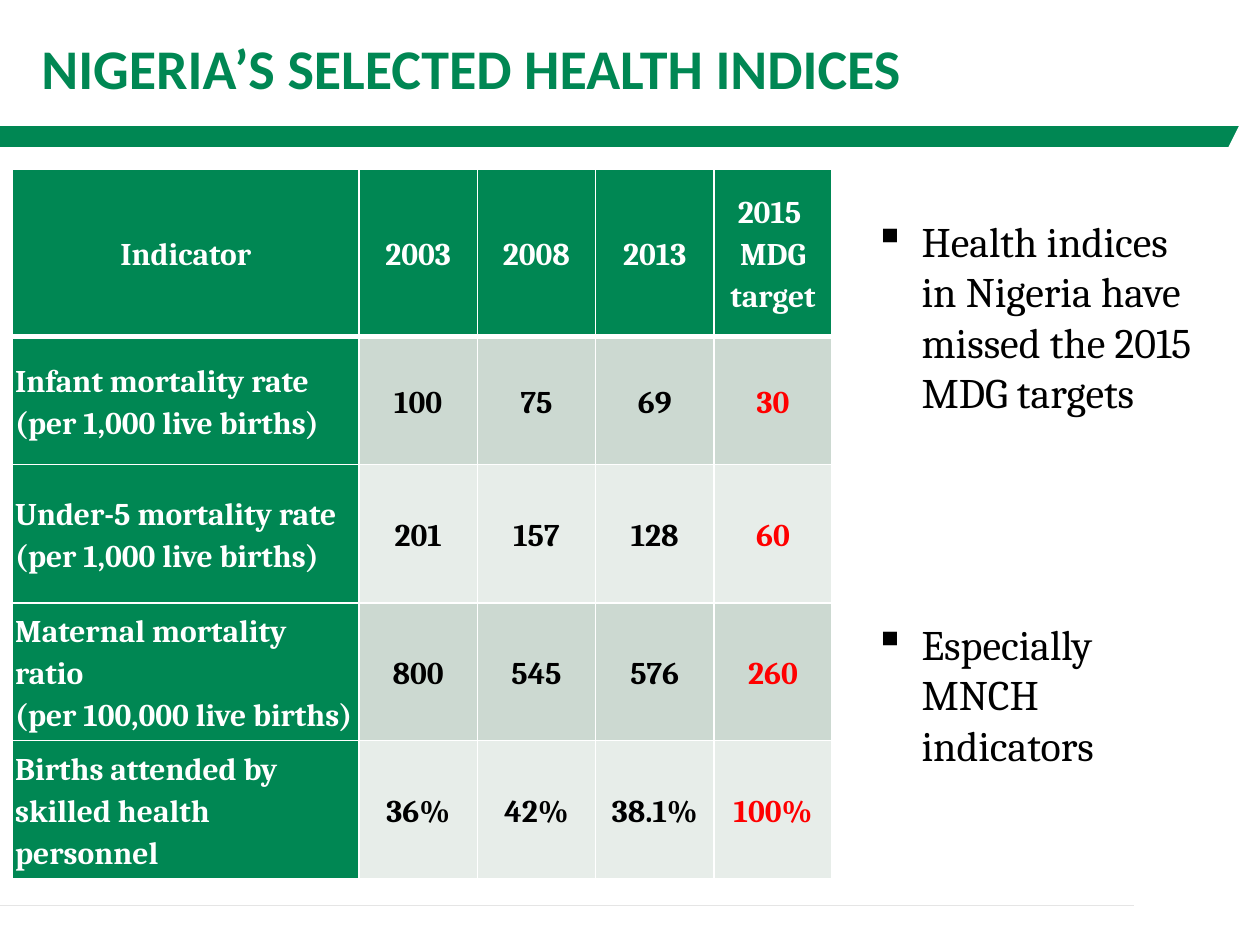
from pptx import Presentation
from pptx.dml.color import RGBColor
from pptx.enum.shapes import MSO_CONNECTOR as Connector, MSO_SHAPE as Shape
from pptx.enum.text import MSO_ANCHOR as Anchor, PP_ALIGN as Align
from pptx.oxml.ns import qn
from pptx.util import Pt
from lxml.etree import SubElement

GREEN = RGBColor(0x00, 0x87, 0x53)
WHITE = RGBColor(0xFF, 0xFF, 0xFF)
BLACK = RGBColor(0x00, 0x00, 0x00)
RED = RGBColor(0xFF, 0x00, 0x00)
GREY = RGBColor(0xE5, 0xE5, 0xE5)
BANDS = (RGBColor(0xE7, 0xED, 0xE9), RGBColor(0xCC, 0xD9, 0xD1))

INDICATORS = [
    ("Indicator", "2003", "2008", "2013", "2015 \nMDG target"),
    ("Infant mortality rate\n(per 1,000 live births)", "100", "75", "69", "30"),
    ("Under-5 mortality rate\n(per 1,000 live births)", "201", "157", "128", "60"),
    ("Maternal mortality ratio\n(per 100,000 live births)", "800", "545", "576", "260"),
    ("Births attended by skilled health personnel", "36%", "42%", "38.1%", "100%"),
]
COLUMN_WIDTHS = (198, 67.6, 67.6, 67.6, 67.6)
ROW_HEIGHTS = (95.8, 73.2, 79, 78.8, 78.8)
MESSAGES = ["Health indices in Nigeria have missed the 2015 MDG targets",
            "Especially MNCH indicators"]


class HealthSlide:
    """Draws styled elements on one slide, with every length in points."""

    def __init__(self, page):
        self.page = page
        self.title_font = "Calibri"
        self.body_font = "Cambria"

    def format_font(self, font, name, size, color, bold=False):
        font.name, font.size, font.bold = name, Pt(size), bold
        font.color.rgb = color

    def shape(self, kind, left, top, width, height, color):
        shape = self.page.shapes.add_shape(kind, Pt(left), Pt(top), Pt(width), Pt(height))
        shape.shadow.inherit = False
        shape.fill.solid()
        shape.fill.fore_color.rgb = color
        shape.line.fill.background()

    def rule(self, left, right, y, color):
        line = self.page.shapes.add_connector(
            Connector.STRAIGHT, Pt(left), Pt(y), Pt(right), Pt(y))
        line.line.color.rgb = color
        line.line.width = Pt(1)
        SubElement(line._element.spPr, qn("a:effectLst"))

    def text_box(self, left, top, width, height, text):
        box = self.page.shapes.add_textbox(Pt(left), Pt(top), Pt(width), Pt(height))
        box.text_frame.word_wrap = True
        box.text_frame.text = text
        return box.text_frame

    def title(self, left, top, width, height, text):
        frame = self.text_box(left, top, width, height, text)
        frame.vertical_anchor = Anchor.MIDDLE
        frame.margin_left = Pt(16.5)
        self.format_font(frame.paragraphs[0].runs[0].font, self.title_font, 32, GREEN, True)

    def bullets(self, left, top, width, height, items, gap):
        frame = self.text_box(left, top, width, height, "\n".join(items))
        for index, para in enumerate(frame.paragraphs):
            properties = para._p.get_or_add_pPr()
            properties.set("marL", str(Pt(27)))
            properties.set("indent", str(-Pt(27)))
            SubElement(properties, qn("a:buChar"), char="▪")
            if index:
                para.space_before = Pt(gap)
            self.format_font(para.runs[0].font, self.body_font, 24, BLACK)

    def border(self, cell, side, width, color):
        line = SubElement(cell._tc.get_or_add_tcPr(), qn(f"a:ln{side}"), w=str(Pt(width)))
        fill = SubElement(line, qn("a:solidFill"))
        SubElement(fill, qn("a:srgbClr"), val=str(color))

    def cell(self, cell, text, fill, color, align, top_width, bottom_width):
        cell.margin_left = cell.margin_right = Pt(1.5)
        cell.margin_top = cell.margin_bottom = 0
        cell.vertical_anchor = Anchor.MIDDLE
        for side, width in (("L", 1), ("R", 1), ("T", top_width), ("B", bottom_width)):
            self.border(cell, side, width, WHITE)
        cell.fill.solid()
        cell.fill.fore_color.rgb = fill
        cell.text_frame.text = text
        for para in cell.text_frame.paragraphs:
            para.alignment = align
            para.line_spacing = 1.15
            self.format_font(para.runs[0].font, self.body_font, 18, color, True)

    def table(self, left, top, widths, heights, rows):
        table = self.page.shapes.add_table(
            len(rows), len(widths), Pt(left), Pt(top), Pt(sum(widths)), Pt(sum(heights))).table
        for column, width in zip(table.columns, widths):
            column.width = Pt(width)
        for row, height in zip(table.rows, heights):
            row.height = Pt(height)
        last = len(widths) - 1
        for r, values in enumerate(rows):
            for c, text in enumerate(values):
                heading = r == 0 or c == 0
                fill = GREEN if heading else BANDS[r % 2]
                color = WHITE if heading else RED if c == last else BLACK
                align = Align.LEFT if r and c == 0 else Align.CENTER
                self.cell(table.cell(r, c), text, fill, color, align,
                          3 if r == 1 else 1, 3 if r == 0 else 1)


def main():
    deck = Presentation()
    deck.slide_width, deck.slide_height = Pt(720), Pt(540)
    slide = HealthSlide(deck.slides.add_slide(deck.slide_layouts[6]))
    slide.shape(Shape.RECTANGLE, 0, 72, 708, 12, GREEN)
    slide.shape(Shape.ISOSCELES_TRIANGLE, 700.5, 72, 15, 15, WHITE)
    slide.rule(0, 648, 517.5, GREY)
    slide.title(7.2, 17.3, 634, 42, "NIGERIA’S SELECTED HEALTH INDICES")
    slide.table(7.2, 96.5, COLUMN_WIDTHS, ROW_HEIGHTS, INDICATORS)
    slide.bullets(492.5, 119.5, 204, 356, MESSAGES, 115)
    deck.save("out.pptx")


if __name__ == "__main__":
    main()
